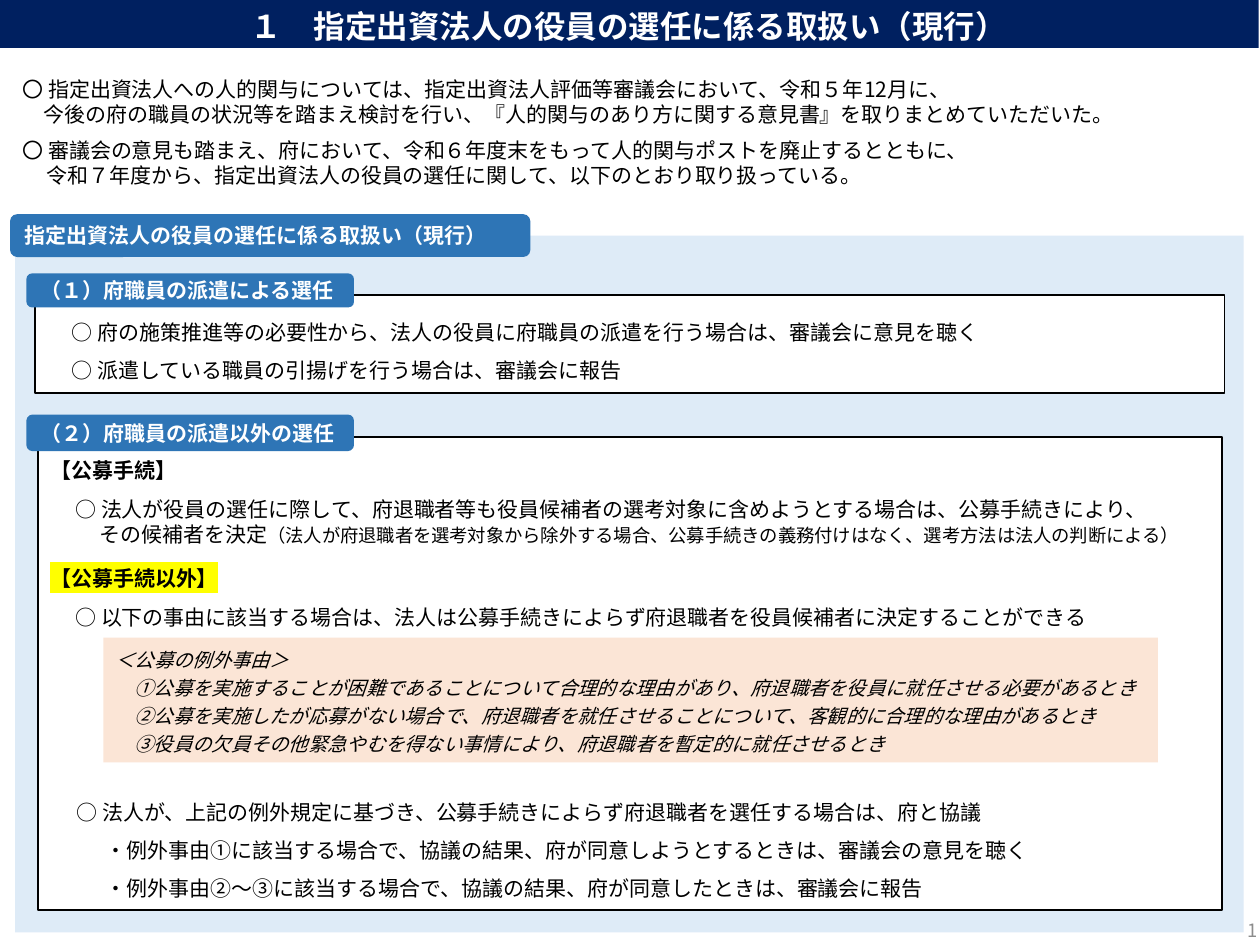
from lxml import etree
from pptx import Presentation
from pptx.dml.color import RGBColor
from pptx.enum.shapes import MSO_SHAPE
from pptx.enum.text import MSO_ANCHOR, PP_ALIGN
from pptx.oxml.ns import qn
from pptx.util import Inches, Pt

RECT, ROUND = MSO_SHAPE.RECTANGLE, MSO_SHAPE.ROUNDED_RECTANGLE
TOP, MIDDLE = MSO_ANCHOR.TOP, MSO_ANCHOR.MIDDLE
LEFT, CENTER, RIGHT = PP_ALIGN.LEFT, PP_ALIGN.CENTER, PP_ALIGN.RIGHT
FONT = "Noto Sans CJK JP"
W, H = 10, 7.5
COLORS = {"navy": "002060", "blue": "2E75B6", "pale": "DEEBF7", "peach": "FBE5D6",
          "white": "FFFFFF", "black": "000000", "gray": "8C8C8C", "yellow": "FFFF00"}

# Content: a paragraph is (runs, format), a run is (text, style), "\n" breaks the line
TITLE = "１　指定出資法人の役員の選任に係る取扱い（現行）"
PAGE = "1"
HEADINGS = [
    ("指定出資法人の役員の選任に係る取扱い（現行）", (0.08, 1.7, 4.13, 0.34)),
    ("（１）府職員の派遣による選任", (0.21, 2.17, 2.6, 0.27)),
    ("（２）府職員の派遣以外の選任", (0.21, 3.29, 2.6, 0.29)),
]
FRAMES = [(0.28, 2.34, 9.44, 0.78), (0.3, 3.47, 9.4, 3.75)]

BOLD = {"bold": True}
MARKED = {"bold": True, "mark": "yellow"}
SMALL = {"size": 10.5}
ITALIC = {"size": 11, "italic": True}
LOOSE = {"spacing": 1.5}
ITEM = {"left": 0.39, "first": -0.19, "before": 8}
REASON = {"spacing": Pt(16), "left": 0.15}

INTRO = [
    ([("〇 指定出資法人への人的関与については、指定出資法人評価等審議会において、令和５年12月に、", {})], {}),
    ([("今後の府の職員の状況等を踏まえ検討を行い、『人的関与のあり方に関する意見書』を取りまとめていただいた。", {})],
     {"left": 0.17}),
    ([("〇 審議会の意見も踏まえ、府において、令和６年度末をもって人的関与ポストを廃止するとともに、", {}), "\n",
      ("令和７年度から、指定出資法人の役員の選任に関して、以下のとおり取り扱っている。", {})],
     {"left": 0.19, "first": -0.19, "before": 6}),
]
DISPATCH = [
    ([("○ 府の施策推進等の必要性から、法人の役員に府職員の派遣を行う場合は、審議会に意見を聴く", {})], LOOSE),
    ([("○ 派遣している職員の引揚げを行う場合は、審議会に報告", {})], LOOSE),
]
OPEN_CALL = [
    ([("【公募手続】", BOLD)], {}),
    ([("○ 法人が役員の選任に際して、府退職者等も役員候補者の選考対象に含めようとする場合は、公募手続きにより、", {}), "\n",
      ("その候補者を決定", {}),
      ("（法人が府退職者を選考対象から除外する場合、公募手続きの義務付けはなく、選考方法は法人の判断による）", SMALL)], ITEM),
]
NO_CALL = [
    ([("【公募手続以外】", MARKED)], {}),
    ([("○ 以下の事由に該当する場合は、法人は公募手続きによらず府退職者を役員候補者に決定することができる", {})], ITEM),
]
REASONS = [
    ([("＜公募の例外事由＞", ITALIC)], {"spacing": Pt(16)}),
    ([("①公募を実施することが困難であることについて合理的な理由があり、府退職者を役員に就任させる必要があるとき", ITALIC)], REASON),
    ([("②公募を実施したが応募がない場合で、府退職者を就任させることについて、客観的に合理的な理由があるとき", ITALIC)], REASON),
    ([("③役員の欠員その他緊急やむを得ない事情により、府退職者を暫定的に就任させるとき", ITALIC)], REASON),
]
CONSULT = [
    ([("○ 法人が、上記の例外規定に基づき、公募手続きによらず府退職者を選任する場合は、府と協議", {})],
     {**LOOSE, "left": 0.21}),
    ([("・例外事由①に該当する場合で、協議の結果、府が同意しようとするときは、審議会の意見を聴く", {})],
     {**LOOSE, "left": 0.44}),
    ([("・例外事由②～③に該当する場合で、協議の結果、府が同意したときは、審議会に報告", {})],
     {**LOOSE, "left": 0.44}),
]

prs = Presentation()
prs.slide_width, prs.slide_height = Inches(W), Inches(H)
s = prs.slides.add_slide(prs.slide_layouts[6])


def rgb(name):
    return RGBColor.from_string(COLORS[name])


def add_box(box, fill, kind=RECT, line=None):
    sp = s.shapes.add_shape(kind, *map(Inches, box))
    sp.shadow.inherit = False
    sp.fill.solid()
    sp.fill.fore_color.rgb = rgb(fill)
    if line:
        sp.line.color.rgb = rgb(line)
        sp.line.width = Pt(1)
    else:
        sp.line.fill.background()
    return sp


def add_run(p, text, size=12, color="black", bold=False, italic=False, mark=None):
    r = p.add_run()
    r.text = text
    f = r.font
    f.size, f.bold, f.italic, f.name = Pt(size), bold, italic, FONT
    f.color.rgb = rgb(color)
    latin = r._r.rPr.find(qn("a:latin"))
    ea = etree.Element(qn("a:ea"), typeface=FONT)
    latin.addnext(ea)
    if mark:
        highlight = etree.Element(qn("a:highlight"))
        etree.SubElement(highlight, qn("a:srgbClr"), val=COLORS[mark])
        latin.addprevious(highlight)


def write(sp, paragraphs, anchor=TOP, align=LEFT):
    tf = sp.text_frame
    tf.word_wrap = True
    tf.vertical_anchor = anchor
    for i, (runs, fmt) in enumerate(paragraphs):
        p = tf.add_paragraph() if i else tf.paragraphs[0]
        p.alignment = align
        p.space_before = Pt(fmt.get("before", 0))
        p.line_spacing = fmt.get("spacing", 1.0)
        pPr = p._p.get_or_add_pPr()
        pPr.set("marL", str(Inches(fmt.get("left", 0))))
        pPr.set("indent", str(Inches(fmt.get("first", 0))))
        for run in runs:
            if run == "\n":
                p.add_line_break()
            else:
                add_run(p, run[0], **run[1])


def add_text(box, paragraphs, anchor=TOP, align=LEFT):
    write(s.shapes.add_textbox(*map(Inches, box)), paragraphs, anchor, align)


# Background panel, title bar and page number
add_box((0.12, 1.87, 9.75, 5.53), "pale")
bar = add_box((-0.01, 0, W, 0.38), "navy")
bar.text_frame.margin_bottom = Inches(0.02)
write(bar, [([(TITLE, {"size": 18, "color": "white", "bold": True})], {})], MIDDLE, CENTER)
add_text((7.83, 7.18, 2.25, 0.4), [([(PAGE, {"size": 10.5, "color": "gray"})], {})], MIDDLE, RIGHT)

# Frames with the headings on their top edges
for frame in FRAMES:
    add_box(frame, "white", line="black")
for text, box in HEADINGS:
    write(add_box(box, "blue", ROUND), [([(text, {"color": "white", "bold": True})], {})], MIDDLE)

# Body text
add_text((0.08, 0.44, W, 1.22), INTRO, MIDDLE)
add_text((0.47, 2.45, 9.13, 0.57), DISPATCH, MIDDLE)
add_text((0.3, 3.58, 9.34, 0.91), OPEN_CALL)
add_text((0.3, 4.44, 9.24, 0.62), NO_CALL)
write(add_box((0.82, 5.06, 8.37, 0.99), "peach"), REASONS)
add_text((0.3, 6.2, 9.24, 1.02), CONSULT)

prs.save("out.pptx")
